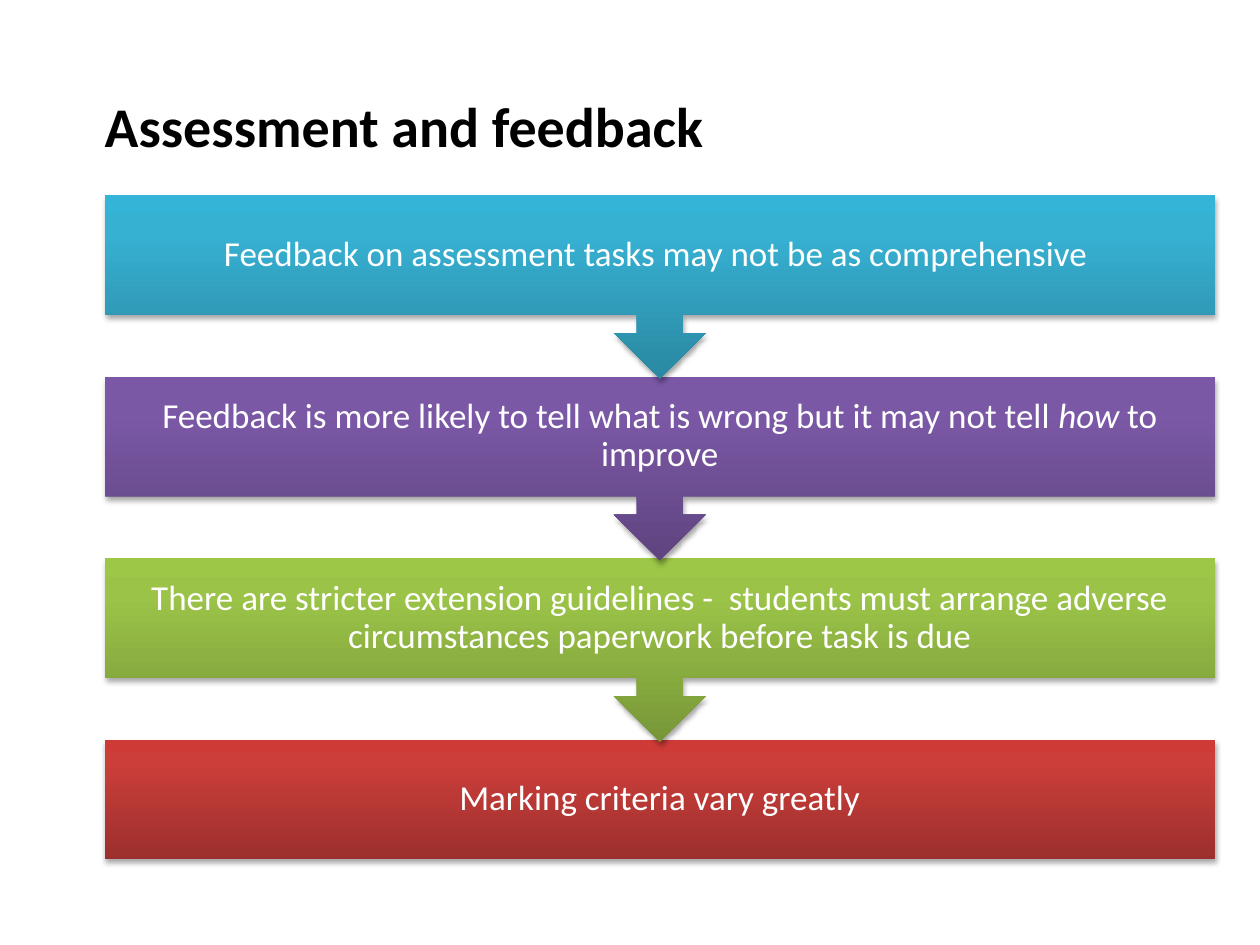
from pptx import Presentation
from pptx.dml.color import RGBColor
from pptx.enum.shapes import MSO_SHAPE as Kind
from pptx.enum.text import MSO_ANCHOR as Anchor, PP_ALIGN as Align
from pptx.oxml import parse_xml
from pptx.oxml.ns import nsdecls
from pptx.util import Cm, Pt

FONT = "Calibri"
LEFT, WIDTH = 2.11, 22.38
TOP, STEP = 3.93, 3.66
BOX, CALL = 2.41, 3.71

STEPS = [
    (["Feedback on assessment tasks may not be as comprehensive "],
     ["2A88A2", "37B1D2", "34B4D6"]),
    (["Feedback is more likely to tell what is wrong but it may not tell ",
      "how", " to improve"],
     ["5F4480", "7B58A6", "7C57A8"]),
    (["There are stricter extension guidelines -  students must arrange "
      "adverse circumstances paperwork before task is due"],
     ["779737", "9BC348", "9DC746"]),
    (["Marking criteria vary greatly"],
     ["9C2F2D", "CB3E3A", "CE3B37"]),
]


def color(code):
    return RGBColor.from_string(code)


def style(run, size, code, bold=False, italic=False):
    font = run.font
    font.name, font.size = FONT, Pt(size)
    font.bold, font.italic = bold, italic
    font.color.rgb = color(code)


def inset(frame, gap):
    frame.margin_left = frame.margin_right = Cm(gap)
    frame.margin_top = frame.margin_bottom = Cm(gap)
    frame.word_wrap = True


def add_title(slide, text):
    title = slide.shapes.title
    title.left, title.top = Cm(LEFT), Cm(1.85)
    title.width, title.height = Cm(21.18), Cm(2.57)
    frame = title.text_frame
    frame.text = text
    inset(frame, 0)
    frame.vertical_anchor = Anchor.TOP
    para = frame.paragraphs[0]
    para.alignment = Align.LEFT
    style(para.runs[0], 32, "000000", bold=True)


def shade(shape, codes):
    stops = "".join(
        f'<a:gs pos="{pos}"><a:srgbClr val="{code}"/></a:gs>'
        for pos, code in zip((0, 80000, 100000), codes))
    fill = parse_xml(
        f'<a:gradFill {nsdecls("a")} rotWithShape="0"><a:gsLst>{stops}</a:gsLst>'
        '<a:lin ang="16200000" scaled="0"/></a:gradFill>')
    shape.element.spPr.find(".//{*}prstGeom").addnext(fill)


def drop(shape):
    shape.shadow.inherit = False
    shape.element.spPr.find("{*}effectLst").append(parse_xml(
        f'<a:outerShdw {nsdecls("a")} blurRad="40000" dist="23000" '
        'dir="5400000" rotWithShape="0"><a:srgbClr val="000000">'
        '<a:alpha val="35000"/></a:srgbClr></a:outerShdw>'))


def add_block(shapes, top, codes, last):
    kind = Kind.RECTANGLE if last else Kind.UP_ARROW_CALLOUT
    high = BOX if last else CALL
    shape = shapes.add_shape(kind, Cm(LEFT), Cm(top), Cm(WIDTH), Cm(high))
    shape.rotation = 0 if last else 180
    shape.line.fill.background()
    shade(shape, codes)
    drop(shape)


def add_label(shapes, top, parts):
    box = shapes.add_textbox(Cm(LEFT), Cm(top), Cm(WIDTH), Cm(BOX))
    frame = box.text_frame
    inset(frame, 0.4)
    frame.vertical_anchor = Anchor.MIDDLE
    para = frame.paragraphs[0]
    para.alignment = Align.CENTER
    para.line_spacing = 0.9
    para.space_after = Pt(7)
    for part in parts:
        run = para.add_run()
        run.text = part
        style(run, 20, "FFFFFF", italic=part == "how")


def main():
    deck = Presentation()
    deck.slide_width, deck.slide_height = Cm(25.4), Cm(19.05)
    slide = deck.slides.add_slide(deck.slide_layouts[5])
    add_title(slide, "Assessment and feedback")
    shapes = slide.shapes.add_group_shape().shapes
    final = len(STEPS) - 1
    for row in range(final, -1, -1):
        parts, codes = STEPS[row]
        top = TOP + row * STEP
        add_block(shapes, top, codes, row == final)
        add_label(shapes, top, parts)
    deck.save("out.pptx")


if __name__ == "__main__":
    main()
